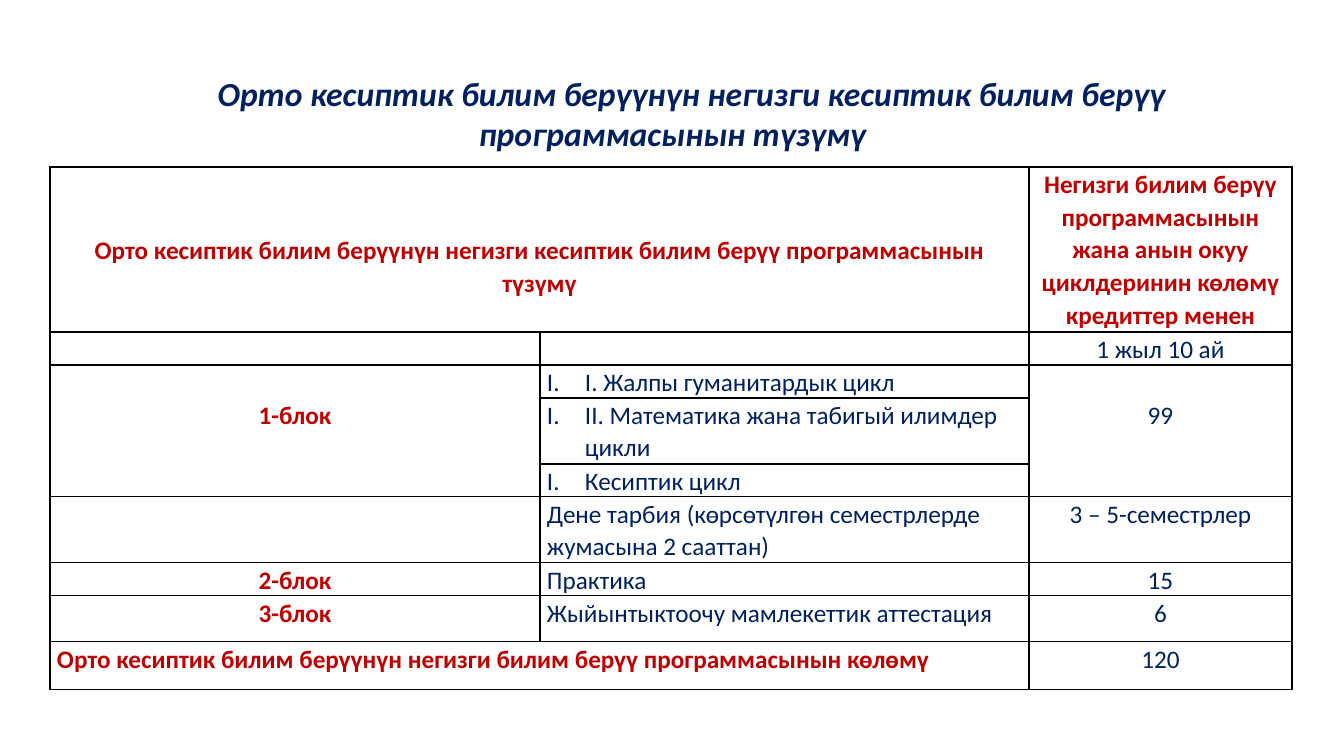
from dataclasses import dataclass

from lxml import etree
from pptx import Presentation
from pptx.dml.color import RGBColor
from pptx.enum.text import MSO_ANCHOR, PP_ALIGN
from pptx.oxml.ns import qn

PX = 914400 / 100.8
LEFT, MID = PP_ALIGN.LEFT, PP_ALIGN.CENTER
CENTER = MSO_ANCHOR.MIDDLE
TITLE_ONLY = 5


@dataclass(frozen=True)
class Theme:
    font: str = "Calibri"
    navy: str = "002060"
    red: str = "C00000"
    white: str = "FFFFFF"
    black: str = "000000"
    head: int = 24
    body: int = 18
    lead: float = 1.07
    rule: int = 12700


THEME = Theme()
TITLE = "Орто кесиптик билим берүүнүн негизги кесиптик билим берүү программасынын түзүмү"
COLS = [490, 489, 263]
ROWS = [165, 33, 33, 66, 33, 66, 33, 46, 48]
LINE = 33
INDENT = 38
SPANS = [((0, 0), (0, 1)), ((2, 0), (4, 0)), ((2, 2), (4, 2)), ((8, 0), (8, 1))]
RED = dict(color=THEME.red, bold=True)
CELLS = {
    (0, 0): (TITLE, RED | dict(top=2 * LINE)),
    (0, 2): ("Негизги билим берүү программасынын жана анын окуу циклдеринин көлөмү кредиттер менен", RED),
    (1, 2): ("1 жыл 10 ай", {}),
    (2, 0): ("1-блок", RED | dict(top=LINE)),
    (2, 1): ("I. Жалпы гуманитардык цикл", dict(roman=True)),
    (2, 2): ("99", dict(top=LINE)),
    (3, 1): ("II. Математика жана табигый илимдер цикли", dict(roman=True)),
    (4, 1): ("Кесиптик цикл", dict(roman=True)),
    (5, 1): ("Дене тарбия (көрсөтүлгөн семестрлерде жумасына 2 сааттан)", dict(align=LEFT)),
    (5, 2): ("3 – 5-семестрлер", {}),
    (6, 0): ("2-блок", RED),
    (6, 1): ("Практика", dict(align=LEFT)),
    (6, 2): ("15", {}),
    (7, 0): ("3-блок", RED),
    (7, 1): ("Жыйынтыктоочу мамлекеттик аттестация", dict(align=LEFT)),
    (7, 2): ("6", {}),
    (8, 0): ("Орто кесиптик билим берүүнүн негизги билим берүү программасынын көлөмү", RED | dict(align=LEFT)),
    (8, 2): ("120", {}),
}


def px(num):
    return round(num * PX)


def write(frame, text, size=THEME.body, color=THEME.navy, bold=False, italic=False,
          align=MID, lead=THEME.lead, left=0, first=0, roman=False):
    para = frame.paragraphs[0]
    para.alignment = LEFT if roman else align
    para.line_spacing = lead
    if roman:
        left, first = INDENT, -INDENT
    props = para._p.get_or_add_pPr()
    props.set("marL", str(px(left)))
    props.set("indent", str(px(first)))
    if roman:
        etree.SubElement(props, qn("a:buAutoNum"), type="romanUcPeriod")
    run = para.add_run()
    run.text = text
    font = run.font
    font.name, font.size = THEME.font, size * 12700
    font.bold, font.italic = bold, italic
    font.color.rgb = RGBColor.from_string(color)


def border(cell):
    props = cell._tc.get_or_add_tcPr()
    for side in ("lnL", "lnR", "lnT", "lnB"):
        line = etree.SubElement(props, qn(f"a:{side}"), w=str(THEME.rule))
        fill = etree.SubElement(line, qn("a:solidFill"))
        etree.SubElement(fill, qn("a:srgbClr"), val=THEME.black)


def style(cell, top=0):
    border(cell)
    cell.fill.solid()
    cell.fill.fore_color.rgb = RGBColor.from_string(THEME.white)
    cell.margin_left = cell.margin_right = px(7)
    cell.margin_top, cell.margin_bottom = px(top), 0


def add_title(slide):
    title = slide.shapes.title
    title.left, title.top, title.width, title.height = map(px, (93, 40, 1159, 146))
    frame = title.text_frame
    frame.word_wrap = True
    frame.vertical_anchor = CENTER
    write(frame, TITLE, size=THEME.head, bold=True, italic=True, lead=1.0, first=INDENT)


def add_grid(slide):
    box = map(px, (50, 167, sum(COLS), sum(ROWS)))
    table = slide.shapes.add_table(len(ROWS), len(COLS), *box).table
    table.first_row = table.horz_banding = False
    for col, width in zip(table.columns, COLS):
        col.width = px(width)
    for row, height in zip(table.rows, ROWS):
        row.height = px(height)
    for start, end in SPANS:
        table.cell(*start).merge(table.cell(*end))
    for row in range(len(ROWS)):
        for col in range(len(COLS)):
            cell = table.cell(row, col)
            text, look = CELLS.get((row, col), ("", {}))
            look = dict(look)
            style(cell, look.pop("top", 0))
            if text:
                write(cell.text_frame, text, **look)


def main():
    deck = Presentation()
    deck.slide_width, deck.slide_height = px(1344), px(756)
    slide = deck.slides.add_slide(deck.slide_layouts[TITLE_ONLY])
    add_title(slide)
    add_grid(slide)
    deck.save("out.pptx")


if __name__ == "__main__":
    main()
